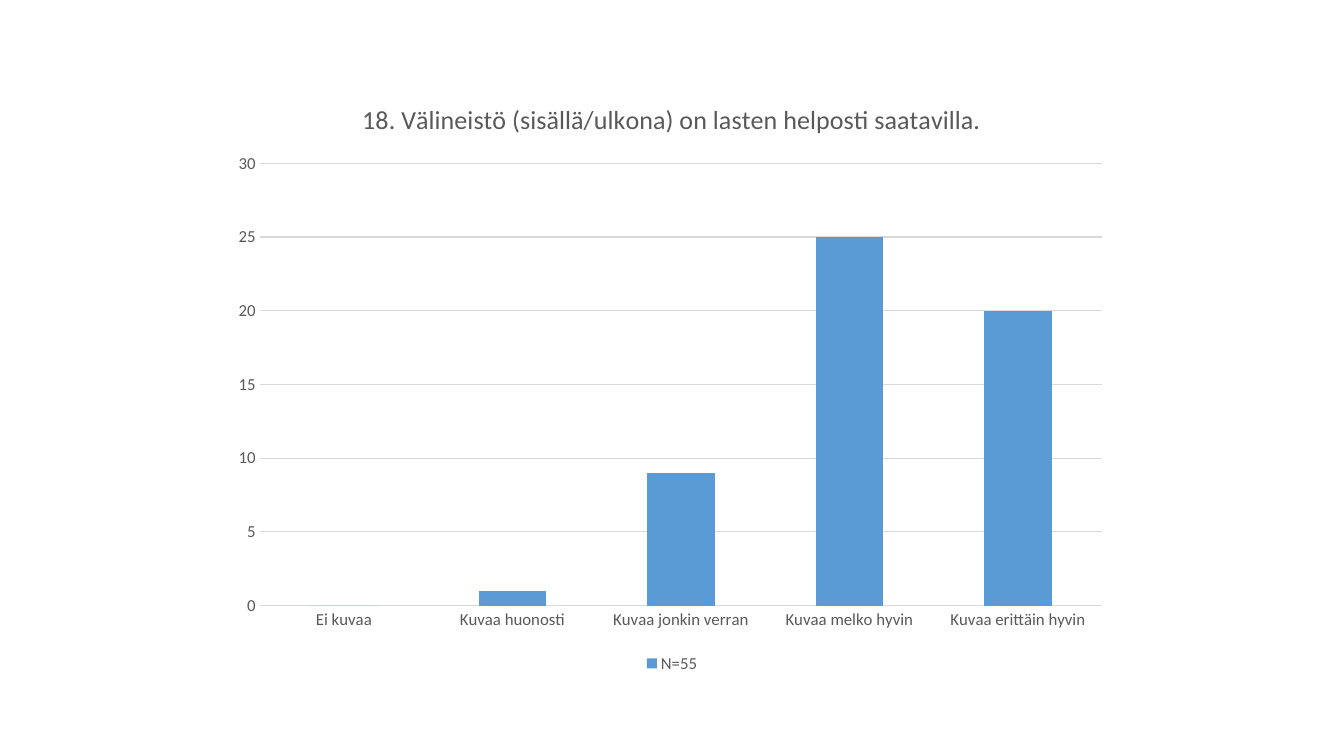
from lxml import etree
from pptx import Presentation
from pptx.chart.data import CategoryChartData
from pptx.dml.color import RGBColor
from pptx.enum.chart import XL_CHART_TYPE, XL_LEGEND_POSITION, XL_TICK_MARK
from pptx.oxml.ns import qn
from pptx.util import Inches, Pt

STACKED_COLUMNS = XL_CHART_TYPE.COLUMN_STACKED
LEGEND_BOTTOM = XL_LEGEND_POSITION.BOTTOM
NO_TICK = XL_TICK_MARK.NONE

TEXT_GREY = RGBColor(0x59, 0x59, 0x59)
LINE_GREY = RGBColor(0xD9, 0xD9, 0xD9)
BAR_BLUE = RGBColor(0x5B, 0x9B, 0xD5)
FONT_NAME = "Calibri"

TITLE = "18. Välineistö (sisällä/ulkona) on lasten helposti saatavilla."
SERIES_NAME = "N=55"
ANSWERS = {
    "Ei kuvaa": 0,
    "Kuvaa huonosti": 1,
    "Kuvaa jonkin verran": 9,
    "Kuvaa melko hyvin": 25,
    "Kuvaa erittäin hyvin": 20,
}
CHART_BOX = (2.22, 0.79, 8.89, 5.93)
PLOT_LAYOUT = {"x": 0.04, "y": 0.14, "w": 0.94, "h": 0.74}


def style_font(font, size):
    font.name = FONT_NAME
    font.size = Pt(size)
    font.bold = False
    font.color.rgb = TEXT_GREY


def style_line(line):
    line.color.rgb = LINE_GREY
    line.width = Pt(0.75)


def place_plot(chart):
    """Fix the inner plot area as fractions of the chart's box."""
    plot_area = chart.element.find(".//" + qn("c:plotArea"))
    layout = plot_area.find(qn("c:layout"))
    if layout is None:
        layout = etree.Element(qn("c:layout"))
        plot_area.insert(0, layout)
    manual = etree.SubElement(layout, qn("c:manualLayout"))
    settings = {"layoutTarget": "inner", "xMode": "edge", "yMode": "edge", **PLOT_LAYOUT}
    for name, value in settings.items():
        etree.SubElement(manual, qn(f"c:{name}")).set("val", str(value))


def style_axes(chart):
    for axis in (chart.category_axis, chart.value_axis):
        axis.major_tick_mark = NO_TICK
        axis.minor_tick_mark = NO_TICK
        style_font(axis.tick_labels.font, 12)
    chart.category_axis.has_major_gridlines = False
    style_line(chart.category_axis.format.line)

    value_axis = chart.value_axis
    value_axis.minimum_scale = 0
    value_axis.maximum_scale = 30
    value_axis.major_unit = 5
    value_axis.format.line.fill.background()
    style_line(value_axis.major_gridlines.format.line)


def add_answer_chart(slide, box):
    data = CategoryChartData()
    data.categories = list(ANSWERS)
    data.add_series(SERIES_NAME, list(ANSWERS.values()))
    lengths = [Inches(length) for length in box]
    chart = slide.shapes.add_chart(STACKED_COLUMNS, *lengths, data).chart
    style_font(chart.font, 12)

    chart.has_title = True
    title_frame = chart.chart_title.text_frame
    title_frame.text = TITLE
    style_font(title_frame.paragraphs[0].font, 18.6)
    chart.chart_title.include_in_layout = False

    chart.has_legend = True
    chart.legend.position = LEGEND_BOTTOM
    chart.legend.include_in_layout = False
    style_font(chart.legend.font, 12)

    plot = chart.plots[0]
    plot.gap_width = 150
    plot.overlap = 100
    plot.vary_by_categories = False
    bars = plot.series[0].format
    bars.fill.solid()
    bars.fill.fore_color.rgb = BAR_BLUE
    bars.line.fill.background()

    style_axes(chart)
    place_plot(chart)


def main():
    deck = Presentation()
    deck.slide_width = Inches(13.33)
    deck.slide_height = Inches(7.5)
    slide = deck.slides.add_slide(deck.slide_layouts[6])
    add_answer_chart(slide, CHART_BOX)
    deck.save("out.pptx")


if __name__ == "__main__":
    main()
